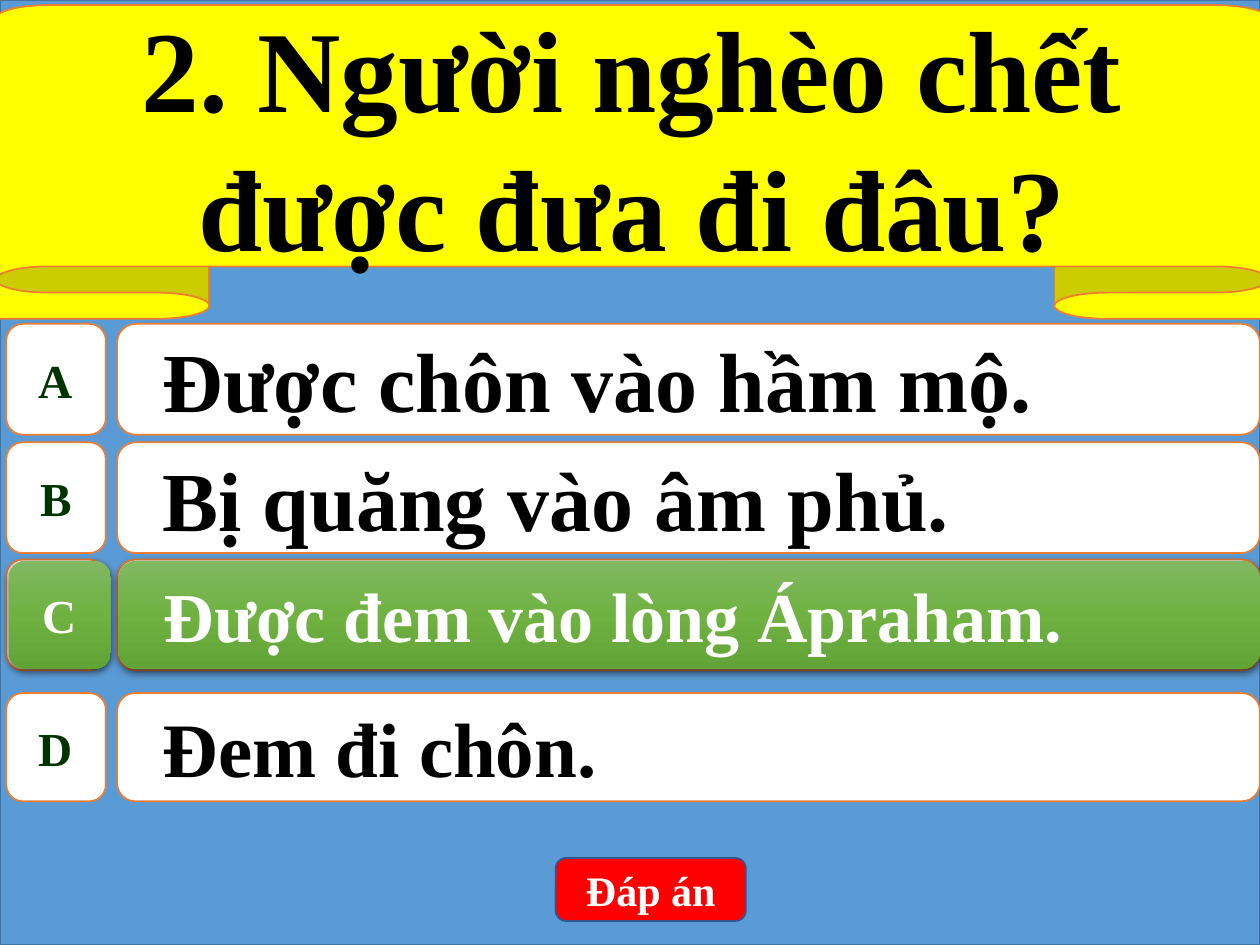
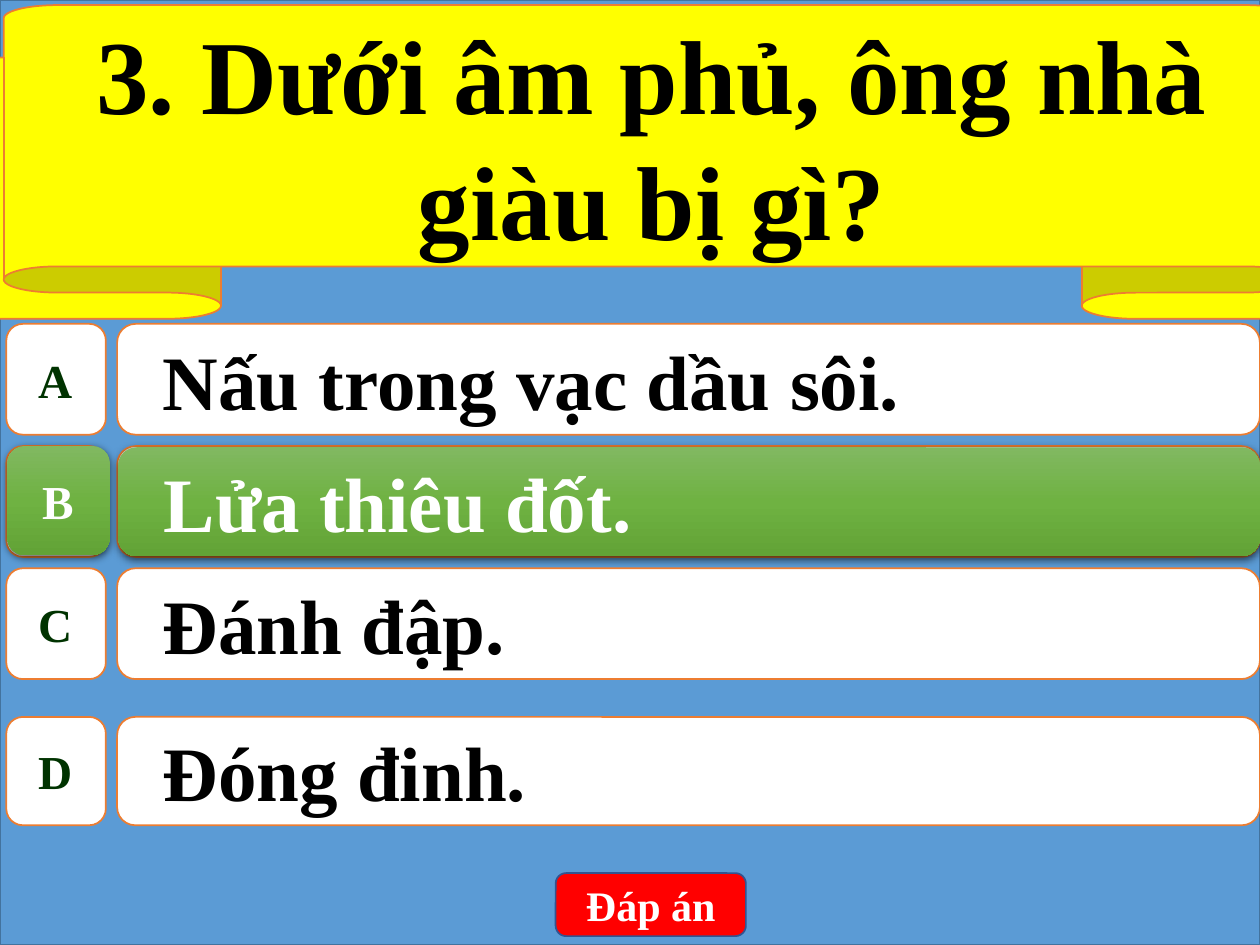
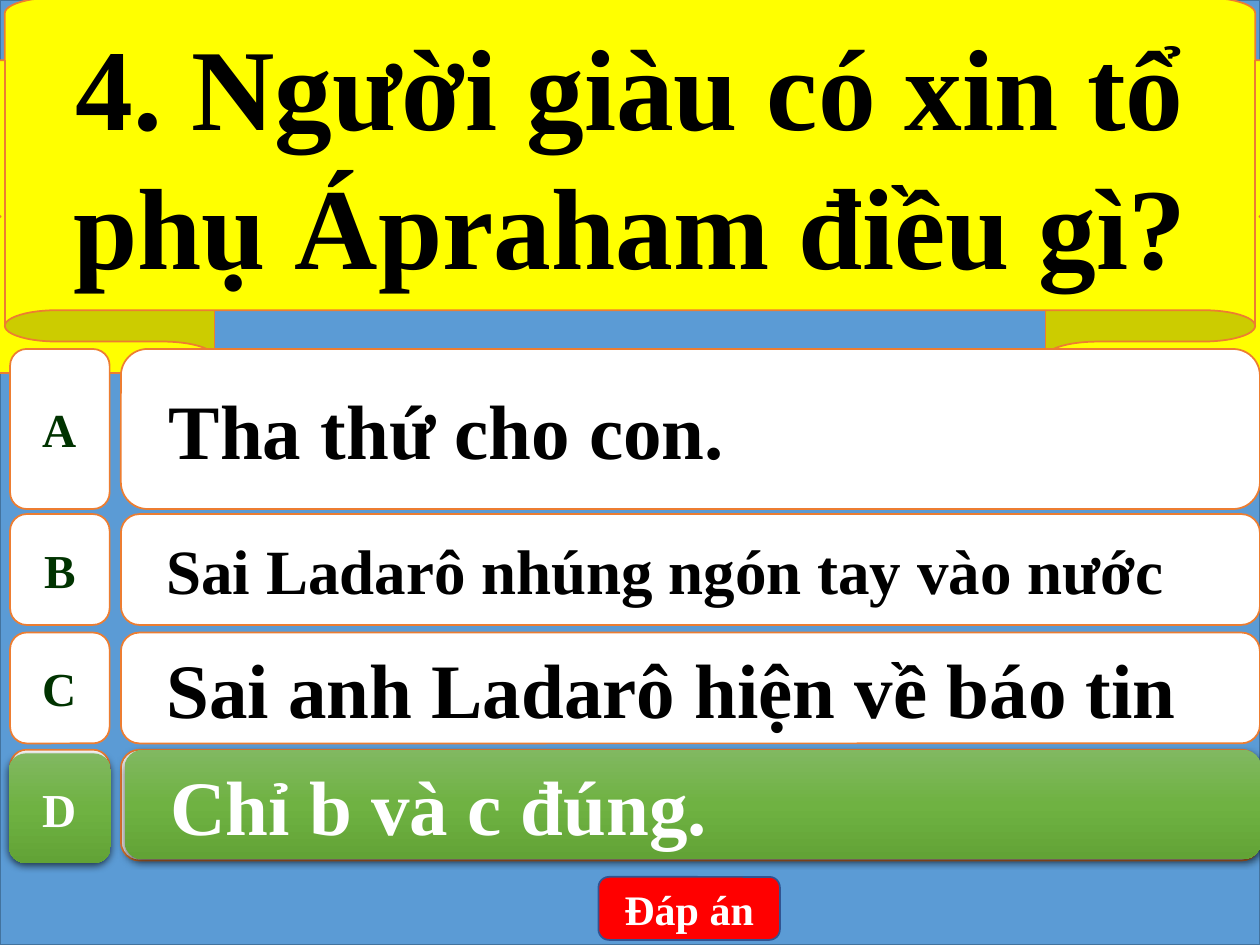
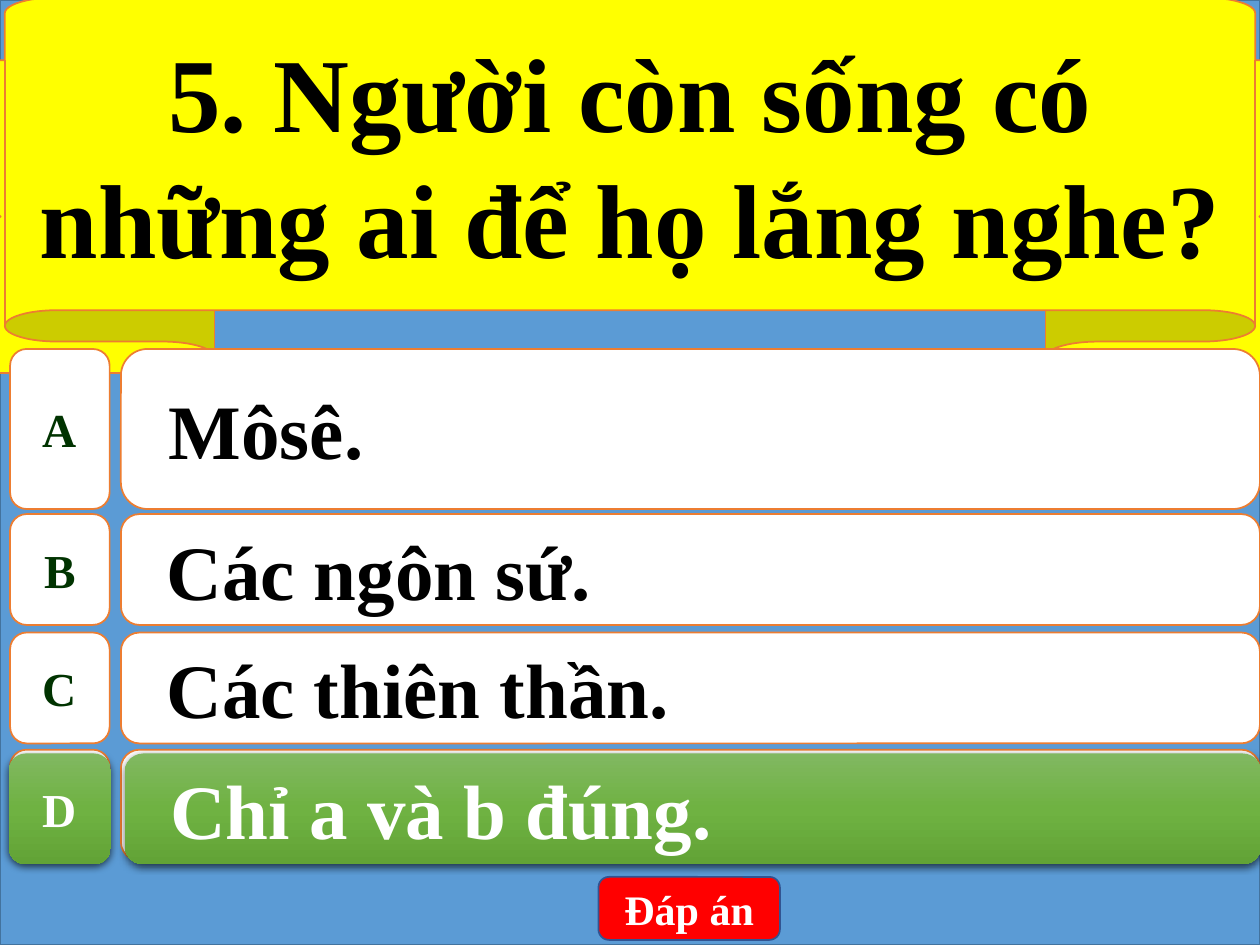
from dataclasses import dataclass
from pptx import Presentation
from pptx.dml.color import RGBColor
from pptx.enum.shapes import MSO_SHAPE
from pptx.enum.text import MSO_ANCHOR, PP_ALIGN
from pptx.oxml import parse_xml
from pptx.oxml.ns import nsdecls, qn
from pptx.util import Pt


@dataclass(frozen=True)
class Theme:
    font: str = "Times New Roman"
    backdrop: str = "5B9BD5"
    backdrop_line: str = "43739E"
    banner: str = "FFFF00"
    accent: str = "ED7D31"
    card: str = "FFFFFF"
    ink: str = "000000"
    letter: str = "003300"
    light: str = "FFFFFF"
    button: str = "FF0000"
    button_line: str = "325491"
    correct: tuple = ((0, "81B861"), (50, "6FB242"), (100, "62A336"))
    letter_size: int = 27
    answer_size: int = 44
    button_size: int = 24


@dataclass(frozen=True)
class Box:
    left: float
    top: float
    width: float
    height: float


@dataclass(frozen=True)
class Arrangement:
    left: float
    tops: tuple
    heights: tuple
    button: Box
    order: str


@dataclass(frozen=True)
class Question:
    text: str
    size: int
    banner: Box
    arrangement: Arrangement
    answers: tuple
    correct: str
    highlight: Box
    highlight_offset: float
    highlight_drop: float = 0


THEME = Theme()
WIDTH, HEIGHT = 720, 540
LETTER_WIDTH = 56.88
HIGHLIGHT_LETTER_WIDTH = 58.32
ANSWER_OFFSET = 63.36
CORNER = 0.167

LOW_BANNER = Box(-119.52, -1.44, 959.04, 214.56)
EVEN = (63.36, 63.36, 63.36, 61.92)
FIRST = Arrangement(3.6, (185.04, 252.72, 319.68, 396), EVEN,
                    Box(317.52, 490.32, 108.72, 36), "ABCD")
SECOND = Arrangement(3.6, (185.04, 254.88, 324.72, 409.68), EVEN,
                     Box(317.52, 498.96, 108.72, 36), "ABCD")
TALL = Arrangement(5.76, (199.44, 293.76, 361.44, 428.4), (91.44, 63.36, 63.36, 63.36),
                   Box(342, 501.12, 103.68, 36), "CBAD")

QUESTIONS = (
    Question("2. Người nghèo chết được đưa đi đâu?", 66,
             Box(-126.72, 2.88, 975.6, 179.28), FIRST,
             (("Được chôn vào hầm mộ.", 48), ("Bị quăng vào âm phủ.", 48),
              ("Được đem vào lòng Ápraham.", 40), ("Đem đi chôn.", THEME.answer_size)),
             "C", Box(5.04, 320.4, 714.96, 61.92), 62.64),
    Question("3. Dưới âm phủ, ông nhà giàu bị gì?", 60,
             Box(-124.56, 2.88, 993.6, 179.28), SECOND,
             (("Nấu trong vạc dầu sôi.", THEME.answer_size), ("Lửa thiêu đốt.", THEME.answer_size),
              ("Đánh đập.", THEME.answer_size), ("Đóng đinh.", THEME.answer_size)),
             "B", Box(4.32, 254.88, 715.68, 62.3), 63.36, 0.72),
    Question("4. Người giàu có xin tổ phụ Ápraham điều gì?", 66, LOW_BANNER, TALL,
             (("Tha thứ cho con.", THEME.answer_size), ("Sai Ladarô nhúng ngón tay vào nước", 36),
              ("Sai anh Ladarô hiện về báo tin", THEME.answer_size),
              ("Chỉ b và c đúng.", THEME.answer_size)),
             "D", Box(5.04, 430.56, 715.68, 62.64), 66.24, -2.16),
    Question("5. Người còn sống có những ai để họ lắng nghe?", 60, LOW_BANNER, TALL,
             (("Môsê.", THEME.answer_size), ("Các ngôn sứ.", THEME.answer_size),
              ("Các thiên thần.", THEME.answer_size), ("Chỉ a và b đúng.", THEME.answer_size)),
             "D", Box(5.04, 430.56, 715.68, 63.36), 66.24),
)


def add_panel(shapes, kind, box, fill=None, line=None, adjustments=()):
    shape = shapes.add_shape(kind, Pt(box.left), Pt(box.top), Pt(box.width), Pt(box.height))
    for index, value in enumerate(adjustments):
        shape.adjustments[index] = value
    if fill:
        shape.fill.solid()
        shape.fill.fore_color.rgb = RGBColor.from_string(fill)
    else:
        apply_correct_look(shape)
    if line:
        shape.line.color.rgb = RGBColor.from_string(line)
        shape.line.width = Pt(1)
    else:
        shape.line.fill.background()
    if fill:
        shape.shadow.inherit = False
    return shape


def apply_correct_look(shape):
    stops = "".join(f'<a:gs pos="{position * 1000}"><a:srgbClr val="{color}"/></a:gs>'
                    for position, color in THEME.correct)
    properties = shape._element.spPr
    properties.append(parse_xml(
        f'<a:gradFill {nsdecls("a")} rotWithShape="1"><a:gsLst>{stops}</a:gsLst>'
        '<a:lin ang="5400000" scaled="0"/></a:gradFill>'))
    shape.shadow.inherit = False
    properties.find(qn("a:effectLst")).append(parse_xml(
        f'<a:outerShdw {nsdecls("a")} blurRad="{Pt(4.5)}" dist="{Pt(1.5)}" dir="5400000" '
        'algn="ctr" rotWithShape="0"><a:srgbClr val="000000"><a:alpha val="63000"/>'
        '</a:srgbClr></a:outerShdw>'))


def write_text(shape, text, *, size, color, align=PP_ALIGN.CENTER, wrap=True, hanging=False):
    frame = shape.text_frame
    frame.word_wrap = wrap
    frame.vertical_anchor = MSO_ANCHOR.MIDDLE
    paragraph = frame.paragraphs[0]
    paragraph.alignment = align
    if hanging:
        paragraph.level = 1
        properties = paragraph._p.get_or_add_pPr()
        properties.set("marL", str(Pt(36)))
        properties.set("indent", str(Pt(-20.16)))
    run = paragraph.add_run()
    run.text = text
    run.font.name = THEME.font
    run.font.size = Pt(size)
    run.font.bold = True
    run.font.color.rgb = RGBColor.from_string(color)


def add_answer(slide, box, letter, answer, *, correct=False, offset=ANSWER_OFFSET, drop=0):
    text, size = answer
    fill, line = (None, None) if correct else (THEME.card, THEME.accent)
    letter_width = HIGHLIGHT_LETTER_WIDTH if correct else LETTER_WIDTH
    shapes = slide.shapes.add_group_shape().shapes
    tile = add_panel(shapes, MSO_SHAPE.FLOWCHART_ALTERNATE_PROCESS,
                     Box(box.left, box.top, letter_width, box.height), fill, line)
    write_text(tile, letter, size=THEME.letter_size, wrap=False,
               color=THEME.light if correct else THEME.letter)
    card = add_panel(shapes, MSO_SHAPE.ROUNDED_RECTANGLE,
                     Box(box.left + offset, box.top + drop, box.width - offset, box.height),
                     fill, line, (CORNER,))
    write_text(card, text, size=size, align=PP_ALIGN.LEFT, hanging=True,
               color=THEME.light if correct else THEME.ink)


def add_banner(slide, box, text, size):
    banner = add_panel(slide.shapes, MSO_SHAPE.UP_RIBBON, box, THEME.banner, THEME.accent,
                       (CORNER, 0.745))
    write_text(banner, text, size=size, color=THEME.ink)


def add_button(slide, box):
    button = add_panel(slide.shapes, MSO_SHAPE.ROUNDED_RECTANGLE, box,
                       THEME.button, THEME.button_line)
    write_text(button, "Đáp án", size=THEME.button_size, color=THEME.light)


def add_question(presentation, question):
    slide = presentation.slides.add_slide(presentation.slide_layouts[6])
    add_panel(slide.shapes, MSO_SHAPE.RECTANGLE, Box(0, 0, WIDTH, HEIGHT),
              THEME.backdrop, THEME.backdrop_line)
    add_banner(slide, question.banner, question.text, question.size)
    arrangement = question.arrangement
    answers = dict(zip("ABCD", question.answers))
    rows = {letter: Box(arrangement.left, top, WIDTH - arrangement.left, height)
            for letter, top, height in zip("ABCD", arrangement.tops, arrangement.heights)}
    for index, letter in enumerate(arrangement.order):
        add_answer(slide, rows[letter], letter, answers[letter])
        if index == 0:
            add_button(slide, arrangement.button)
    add_answer(slide, question.highlight, question.correct, answers[question.correct],
               correct=True, offset=question.highlight_offset, drop=question.highlight_drop)


def main():
    presentation = Presentation()
    presentation.slide_width = Pt(WIDTH)
    presentation.slide_height = Pt(HEIGHT)
    for question in QUESTIONS:
        add_question(presentation, question)
    presentation.save("out.pptx")


if __name__ == "__main__":
    main()
